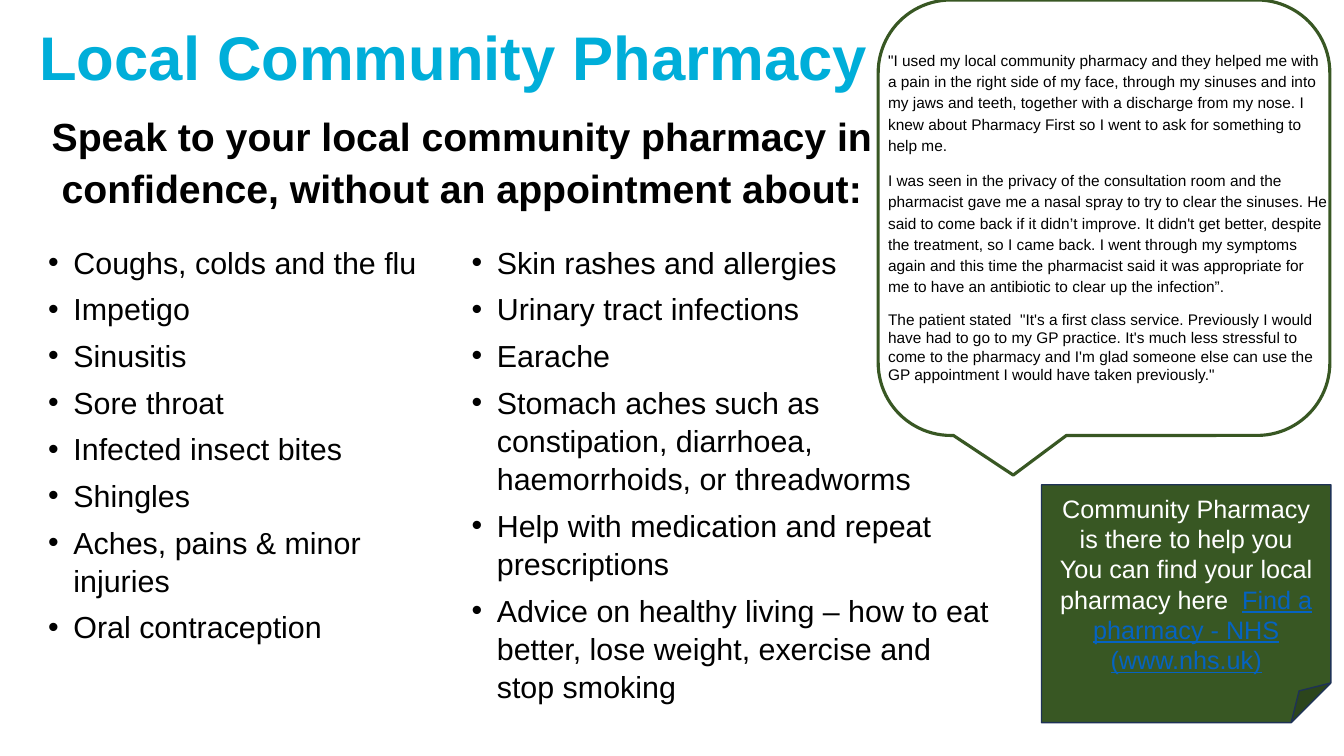
from pptx import Presentation
from pptx.dml.color import RGBColor
from pptx.enum.shapes import MSO_SHAPE as Shape
from pptx.enum.text import MSO_ANCHOR as Anchor, MSO_AUTO_SIZE as AutoSize, PP_ALIGN as Align
from pptx.oxml.ns import qn
from pptx.util import Inches, Pt
from lxml import etree

BLACK = RGBColor(0x00, 0x00, 0x00)
WHITE = RGBColor(0xFF, 0xFF, 0xFF)
CYAN = RGBColor(0x00, 0xAE, 0xD9)
GREEN = RGBColor(0x38, 0x57, 0x23)
NAVY = RGBColor(0x1E, 0x32, 0x56)
LINK_BLUE = RGBColor(0x05, 0x63, 0xC1)

LEFT_CONDITIONS = [
    "Coughs, colds and the flu",
    "Impetigo",
    "Sinusitis",
    "Sore throat",
    "Infected insect bites",
    "Shingles",
    "Aches, pains & minor injuries",
    "Oral contraception",
]
RIGHT_CONDITIONS = [
    "Skin rashes and allergies",
    "Urinary tract infections",
    "Earache",
    "Stomach aches such as constipation, diarrhoea, haemorrhoids, or threadworms",
    "Help with medication and repeat prescriptions",
    "Advice on healthy living – how to eat better, lose weight, exercise and stop smoking",
]
TESTIMONIAL = [
    ("\"I used my local community pharmacy and they helped me with a pain in the right side "
     "of my face, through my sinuses and into my jaws and teeth, together with a discharge "
     "from my nose. I knew about Pharmacy First so I went to ask for something to help me.",
     1.15, 10),
    ("I was seen in the privacy of the consultation room and the pharmacist gave me a nasal "
     "spray to try to clear the sinuses. He said to come back if it didn’t improve. It didn't "
     "get better, despite the treatment, so I came back. I went through my symptoms again and "
     "this time the pharmacist said it was appropriate for me to have an antibiotic to clear "
     "up the infection”.", 1.15, 10),
    ("The patient stated  \"It's a first class service. Previously I would have had to go to "
     "my GP practice. It's much less stressful to come to the pharmacy and I'm glad someone "
     "else can use the GP appointment I would have taken previously.\"", 1, 0),
]


def style(para, size, color, bold=False, align=Align.LEFT, spacing=1, after=0):
    para.alignment = align
    para.line_spacing = spacing
    para.space_before = Pt(0)
    para.space_after = Pt(after)
    para.font.name = "Arial"
    para.font.size = Pt(size)
    para.font.bold = bold
    para.font.color.rgb = color


def add_text(left, top, width, height):
    """Add a wrapping text box and return its text frame."""
    box = slide.shapes.add_textbox(Inches(left), Inches(top), Inches(width), Inches(height))
    box.text_frame.word_wrap = True
    return box.text_frame


deck = Presentation()
deck.slide_width, deck.slide_height = Inches(13.33), Inches(7.5)
slide = deck.slides.add_slide(deck.slide_layouts[5])

title = slide.shapes.title
title.left, title.top = Inches(0.29), Inches(-0.12)
title.width, title.height = Inches(11.5), Inches(1.45)
title.text_frame.text = "Local Community Pharmacy"
title.text_frame.auto_size = AutoSize.NONE
title.text_frame.vertical_anchor = Anchor.MIDDLE
style(title.text_frame.paragraphs[0], 44, CYAN, bold=True, spacing=0.9)

# Speech bubble
bubble = slide.shapes.add_shape(
    Shape.ROUNDED_RECTANGULAR_CALLOUT, Inches(8.71), 0, Inches(4.48), Inches(4.32))
for index, value in enumerate((-0.201, 0.591, 0.167)):
    bubble.adjustments[index] = value
bubble.shadow.inherit = False
bubble.fill.background()
bubble.line.color.rgb = GREEN
bubble.line.width = Pt(2.25)

# Green note
note = slide.shapes.add_shape(
    Shape.FOLDED_CORNER, Inches(10.33), Inches(4.81), Inches(2.87), Inches(2.36))
note.shadow.inherit = False
note.fill.solid()
note.fill.fore_color.rgb = GREEN
note.line.color.rgb = NAVY
note.line.width = Pt(1)
note.text_frame.vertical_anchor = Anchor.MIDDLE
note.text_frame.text = "Community Pharmacy is there to help you\nYou can find your local pharmacy here  "
for para in note.text_frame.paragraphs:
    style(para, 18, WHITE, align=Align.CENTER)
link = note.text_frame.paragraphs[1].add_run()
link.text = "Find a pharmacy - NHS (www.nhs.uk)"
link.font.color.rgb = LINK_BLUE
link.font.underline = True

# Bulleted columns
for conditions, place in ((LEFT_CONDITIONS, (0.38, 2.35, 4.11, 4.51)),
                          (RIGHT_CONDITIONS, (4.58, 2.35, 5.36, 4.81))):
    frame = add_text(*place)
    frame.text = "\n".join(conditions)
    for para in frame.paragraphs:
        properties = para._p.get_or_add_pPr()
        properties.set("marL", str(Inches(0.25)))
        properties.set("indent", str(-Inches(0.25)))
        etree.SubElement(properties, qn("a:buFont")).set("typeface", "Arial")
        etree.SubElement(properties, qn("a:buChar")).set("char", "•")
        style(para, 21.7, BLACK, spacing=1.05, after=6)

frame = add_text(0.04, 1.02, 9.08, 1.27)
frame.text = "Speak to your local community pharmacy in confidence, without an appointment about:"
style(frame.paragraphs[0], 28, BLACK, bold=True, align=Align.CENTER, spacing=1.1, after=6)

frame = add_text(8.71, 0.43, 4.57, 3.46)
frame.auto_size = AutoSize.SHAPE_TO_FIT_TEXT
frame.text = "\n".join(text for text, _, _ in TESTIMONIAL)
for para, (_, spacing, after) in zip(frame.paragraphs, TESTIMONIAL):
    style(para, 11, BLACK, spacing=spacing, after=after)

deck.save("out.pptx")
